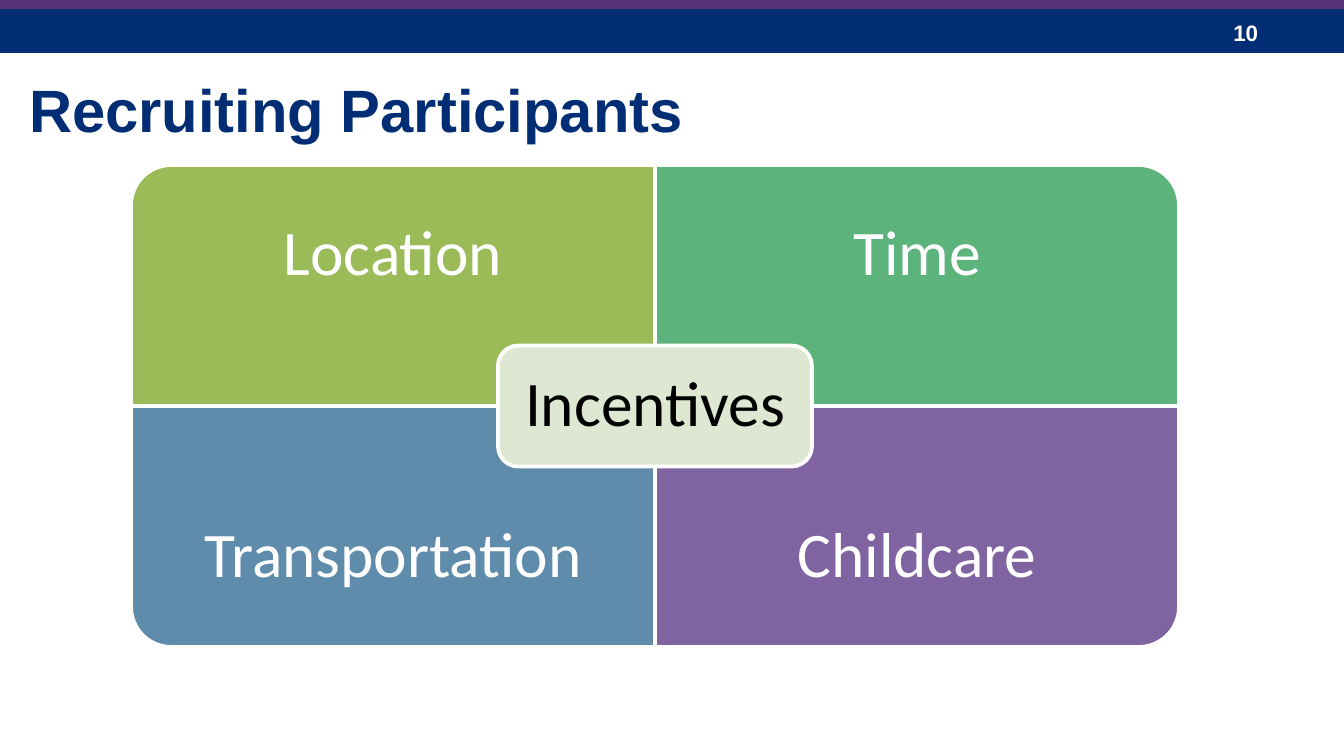
"""Build the Recruiting Participants slide with a titled four-part matrix."""
from pptx import Presentation
from pptx.dml.color import RGBColor
from pptx.enum.shapes import MSO_SHAPE
from pptx.enum.text import MSO_ANCHOR, PP_ALIGN
from pptx.util import Emu, Pt

RECT, ROUND = MSO_SHAPE.RECTANGLE, MSO_SHAPE.ROUNDED_RECTANGLE
CORNER = MSO_SHAPE.ROUND_1_RECTANGLE
MIDDLE, TOP = MSO_ANCHOR.MIDDLE, MSO_ANCHOR.TOP
CENTER, LEFT = PP_ALIGN.CENTER, PP_ALIGN.LEFT

COLORS = {
    "navy": "002D73", "plum": "553278", "white": "FFFFFF", "black": "000000",
    "lime": "9BBB59", "green": "5CB37C", "blue": "608CAB",
    "purple": "8064A2", "pale": "DEE7D1",
}
TITLE = "Recruiting Participants"
NUMBER = "10"
HUB = "Incentives"
PARTS = [
    ("Location", "lime", 270), ("Time", "green", 0),
    ("Transportation", "blue", 180), ("Childcare", "purple", 90),
]

SCALE = 914400 / 134.4
GRID_X, GRID_Y, CELL_W, CELL_H = 131, 165, 524, 241
LABEL_H = 180
HUB_W, HUB_H, HUB_PAD = 314, 121, 6


def px(n):
    return Emu(round(n * SCALE))


def color(name):
    return RGBColor.from_string(COLORS[name])


def add_block(shapes, kind, box, fill, line=None):
    block = shapes.add_shape(kind, *map(px, box))
    block.shadow.inherit = False
    block.fill.solid()
    block.fill.fore_color.rgb = color(fill)
    if line:
        block.line.color.rgb = color(line)
        block.line.width = Pt(2)
    else:
        block.line.fill.background()
    return block


def add_text(shapes, text, box, font, size, ink, bold=False):
    frame = shapes.add_textbox(*map(px, box)).text_frame
    frame.word_wrap = True
    frame.vertical_anchor = TOP
    frame.text = text
    para = frame.paragraphs[0]
    para.alignment = LEFT
    run = para.runs[0].font
    run.name, run.size, run.bold = font, Pt(size), bold
    run.color.rgb = color(ink)
    return frame


def add_label(shapes, text, box, ink, inset):
    frame = add_text(shapes, text, box, "Calibri", 34, ink)
    frame.vertical_anchor = MIDDLE
    frame.margin_left = frame.margin_right = px(inset)
    frame.margin_top = frame.margin_bottom = px(inset)
    frame.paragraphs[0].alignment = CENTER
    frame.paragraphs[0].line_spacing = 0.9


def add_matrix(slide):
    shapes = slide.shapes.add_group_shape().shapes
    for i, (text, fill, turn) in enumerate(PARTS):
        row, col = divmod(i, 2)
        x, y = GRID_X + col * CELL_W, GRID_Y + row * CELL_H
        w, h = (CELL_H, CELL_W) if turn % 180 else (CELL_W, CELL_H)
        box = (x + (CELL_W - w) / 2, y + (CELL_H - h) / 2, w, h)
        add_block(shapes, CORNER, box, fill, "white").rotation = turn
        drop = row * (CELL_H - LABEL_H)
        add_label(shapes, text, (x, y + drop, CELL_W, LABEL_H), "white", 35)
    x, y = GRID_X + CELL_W - HUB_W / 2, GRID_Y + CELL_H - HUB_H / 2
    add_block(shapes, ROUND, (x, y, HUB_W, HUB_H), "pale", "white")
    inner = (x + HUB_PAD, y + HUB_PAD, HUB_W - 2 * HUB_PAD, HUB_H - 2 * HUB_PAD)
    add_label(shapes, HUB, inner, "black", 19)


def main():
    deck = Presentation()
    deck.slide_width, deck.slide_height = px(1344), px(756)
    slide = deck.slides.add_slide(deck.slide_layouts[6])
    shapes = slide.shapes
    add_block(shapes, RECT, (0, 9, 1344, 44), "navy")
    add_text(shapes, NUMBER, (1220, 13, 101, 40), "Arial", 12, "white", True)
    add_block(shapes, RECT, (0, 0, 1344, 9), "plum")
    add_matrix(slide)
    add_text(shapes, TITLE, (16, 66, 1277, 86), "Arial", 32, "navy", True)
    deck.save("out.pptx")


if __name__ == "__main__":
    main()
